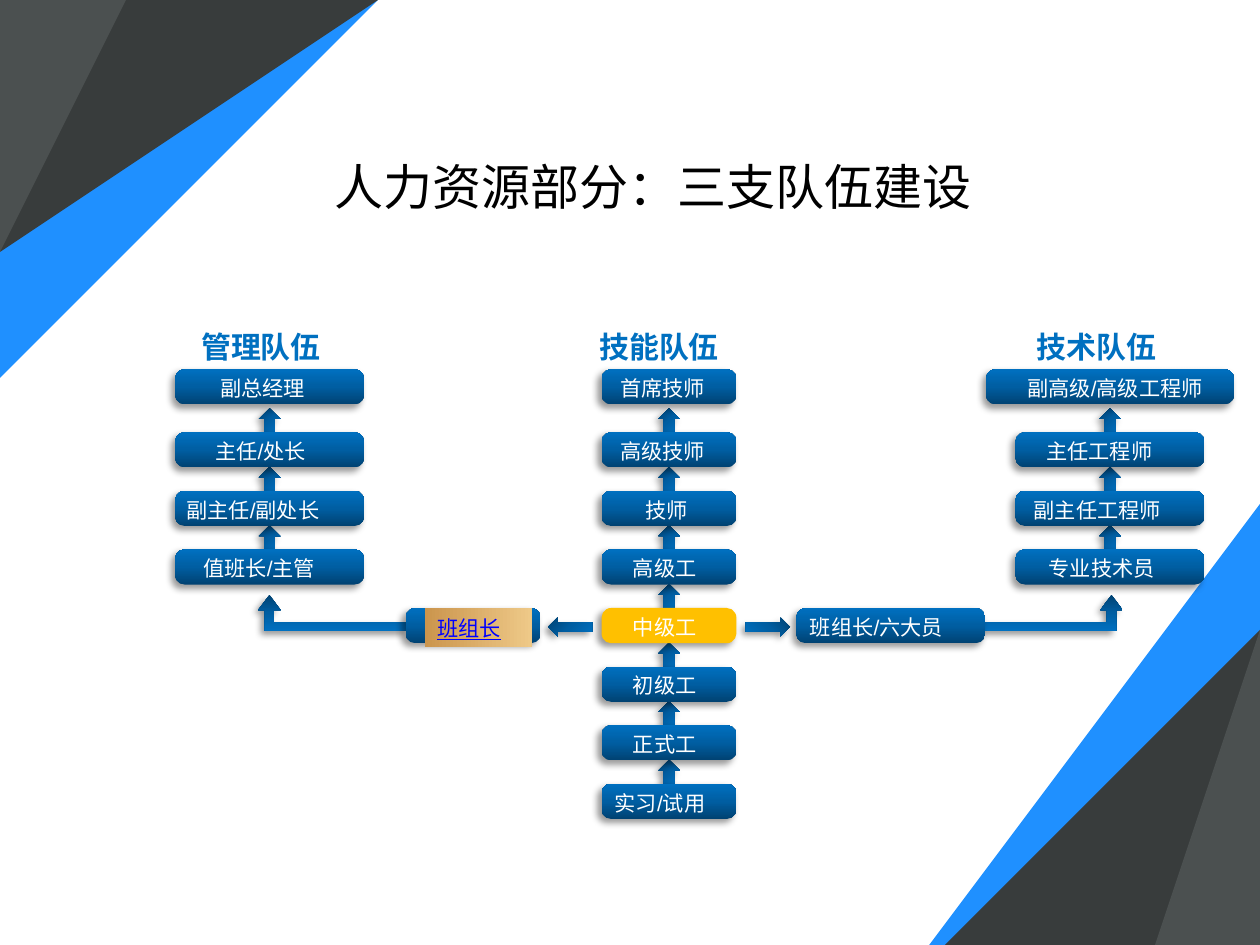
from copy import deepcopy

from lxml import etree
from pptx import Presentation
from pptx.dml.color import RGBColor
from pptx.enum.shapes import MSO_SHAPE
from pptx.enum.text import PP_ALIGN
from pptx.oxml.ns import qn
from pptx.util import Inches, Pt

ROUNDED, RECTANGLE = MSO_SHAPE.ROUNDED_RECTANGLE, MSO_SHAPE.RECTANGLE
ARROW, ELBOW = MSO_SHAPE.RIGHT_ARROW, MSO_SHAPE.BENT_UP_ARROW
LEFT, CENTER = PP_ALIGN.LEFT, PP_ALIGN.CENTER

BLACK = RGBColor(0x00, 0x00, 0x00)
WHITE = RGBColor(0xFF, 0xFF, 0xFF)
BLUE = RGBColor(0x00, 0x70, 0xC0)
GOLD = RGBColor(0xFF, 0xC0, 0x00)
LINK = RGBColor(0x00, 0x00, 0xFF)
BAND = RGBColor(0x00, 0x81, 0xFF)
CHARCOAL = RGBColor(0x38, 0x3C, 0x3C)
SLATE = RGBColor(0x4B, 0x50, 0x50)
BLUE_SHADES = [RGBColor(0x00, 0x42, 0x72), RGBColor(0x00, 0x5E, 0xA2), BLUE]
SAND_SHADES = [RGBColor(0xCB, 0x95, 0x4D), RGBColor(0xEE, 0xC9, 0x88)]

# Grid in inches: one heading row, then evenly spaced rungs
WIDTH, HEIGHT = 10, 7.5
FIRST_ROW, SECOND_ROW, PITCH = 2.93, 3.43, 0.465
PILL_HEIGHT, LABEL_HEIGHT, LABEL_SHIFT = 0.28, 0.31, 0.04
BRANCH_ROW = 4
NARROW, WIDE = 1.07, 1.5

# Ladders: heading, heading left, centre line, pill width, (rung, label width)
LADDERS = [
    ("管理队伍", 1.5, 2.14, WIDE,
     [("副总经理", 1.06), ("主任/处长", 1.14), ("副主任/副处长", 1.6), ("值班长/主管", 1.33)]),
    ("技能队伍", 4.66, 5.31, NARROW,
     [("首席技师", 1.05), ("高级技师", 1.05), ("技师", 0.65), ("高级工", 0.85),
      ("中级工", 0.85), ("初级工", 0.85), ("正式工", 0.85), ("实习/试用", 1.14)]),
    ("技术队伍", 8.13, 8.81, WIDE,
     [("副高级/高级工程师", 1.96), ("主任工程师", 1.29), ("副主任工程师", 1.49), ("专业技术员", 1.25)]),
]

CORNERS = [
    (BAND, 88, [(6.66, 7.5), (10, 4.37), (10, 5.16), (7.5, 7.5)]),
    (CHARCOAL, 100, [(7.24, 7.5), (10, 4.92), (10, 7.5)]),
    (SLATE, 100, [(9.2, 7.5), (10, 4.97), (10, 7.5)]),
    (BAND, 88, [(3.11, 0), (0, 2.91), (0, 2.18), (2.32, 0)]),
    (CHARCOAL, 100, [(2.57, 0), (0, 2.4), (0, 0)]),
    (SLATE, 100, [(0.74, 0), (0, 2.35), (0, 0)]),
]


def row_top(row):
    return FIRST_ROW if row == 0 else SECOND_ROW + (row - 1) * PITCH


def set_gradient(shape, colors, angle):
    shape.fill.gradient()
    shape.fill.gradient_angle = angle
    stop_list = shape._element.spPr.find(".//" + qn("a:gsLst"))
    for _ in colors[2:]:
        stop_list.insert(1, deepcopy(stop_list[0]))
    for index, stop in enumerate(shape.fill.gradient_stops):
        stop.position = index / (len(colors) - 1)
        stop.color.rgb = colors[index]


def add_shadow(shape):
    effects = shape._element.spPr.find(qn("a:effectLst"))
    shadow = etree.SubElement(effects, qn("a:outerShdw"), blurRad=str(Pt(4)),
                              dist=str(Pt(3)), dir="8100000", rotWithShape="0")
    color = etree.SubElement(shadow, qn("a:srgbClr"), val="000000")
    etree.SubElement(color, qn("a:alpha"), val="40000")


def add_block(slide, kind, box, colors=BLUE_SHADES, angle=90, shadow=True):
    """A borderless preset shape with a gradient or, for one colour, a solid fill."""
    shape = slide.shapes.add_shape(kind, *map(Inches, box))
    shape.shadow.inherit = False
    shape.line.fill.background()
    if len(colors) == 1:
        shape.fill.solid()
        shape.fill.fore_color.rgb = colors[0]
    else:
        set_gradient(shape, colors, angle)
    if shadow:
        add_shadow(shape)
    return shape


def write(shape, text, alignment=LEFT, **font_format):
    shape.text_frame.word_wrap = True
    paragraph = shape.text_frame.paragraphs[0]
    paragraph.alignment = alignment
    run = paragraph.add_run()
    run.text = text
    font_format = {"size": Pt(12.1), "name": "Arial", **font_format}
    run.font.color.rgb = font_format.pop("color", WHITE)
    for name, value in font_format.items():
        setattr(run.font, name, value)


def add_text(slide, box, text, **text_format):
    write(slide.shapes.add_textbox(*map(Inches, box)), text, **text_format)


def flip(shape):
    shape._element.spPr.find(qn("a:xfrm")).set("flipH", "1")


def label_box(center, row, width):
    return center + LABEL_SHIFT - width / 2, row_top(row), width, LABEL_HEIGHT


def add_pill(slide, center, row, width, colors=BLUE_SHADES):
    box = center - width / 2, row_top(row), width, PILL_HEIGHT
    add_block(slide, ROUNDED, box, colors).adjustments[0] = 0.275


def add_corners(slide):
    for color, opacity, points in CORNERS:
        builder = slide.shapes.build_freeform(*points[0], scale=Inches(1))
        builder.add_line_segments(points[1:], close=True)
        shape = builder.convert_to_shape()
        shape.shadow.inherit = False
        shape.line.fill.background()
        shape.fill.solid()
        shape.fill.fore_color.rgb = color
        if opacity < 100:
            fill_color = shape._element.spPr.find(".//" + qn("a:srgbClr"))
            etree.SubElement(fill_color, qn("a:alpha"), val=str(opacity * 1000))


def add_ladder(slide, heading, heading_left, center, pill_width, rungs):
    # Upward arrows between rungs
    for row in range(1, len(rungs)):
        box = center - 0.095, row_top(row) - 0.18, 0.19, 0.17
        add_block(slide, ARROW, box, angle=225).rotation = 270
    # Rungs
    for row, (text, label_width) in enumerate(rungs):
        oversized = label_width > 1.9
        colors = [GOLD] if text == "中级工" else BLUE_SHADES
        add_pill(slide, center, row, 1.97 if oversized else pill_width, colors)
        add_text(slide, label_box(center, row, label_width), text,
                 alignment=CENTER if oversized else LEFT)
    add_text(slide, (heading_left, 2.56, 1.39, 0.4), heading,
             size=Pt(17.1), color=BLUE, bold=True)


def add_branches(slide):
    """Sideways paths from the middle ladder to the two outer ones."""
    for elbow_left, arrow_left, flipped in [(2.05, 4.35, True), (7.73, 5.92, False)]:
        elbow = add_block(slide, ELBOW, (elbow_left, 4.72, 1.18, 0.29), angle=270)
        for index, value in enumerate((0.25, 0.304, 0.418)):
            elbow.adjustments[index] = value
        arrow = add_block(slide, ARROW, (arrow_left, 4.9, 0.35, 0.15), angle=225)
        if flipped:
            flip(elbow)
            flip(arrow)
    add_pill(slide, 3.755, BRANCH_ROW, NARROW)
    tile = add_block(slide, RECTANGLE, label_box(3.755, BRANCH_ROW, 0.85),
                     SAND_SHADES, 0, shadow=False)
    write(tile, "班组长", color=LINK, underline=True)
    add_pill(slide, 7.07, BRANCH_ROW, WIDE)
    add_text(slide, label_box(7.07, BRANCH_ROW, 1.56), "班组长/六大员")


def main():
    presentation = Presentation()
    presentation.slide_width = Inches(WIDTH)
    presentation.slide_height = Inches(HEIGHT)
    slide = presentation.slides.add_slide(presentation.slide_layouts[6])
    add_corners(slide)
    add_text(slide, (2.56, 1.19, 5.48, 0.57), "人力资源部分：三支队伍建设",
             size=Pt(28), color=BLACK)
    add_branches(slide)
    for ladder in LADDERS:
        add_ladder(slide, *ladder)
    presentation.save("out.pptx")


if __name__ == "__main__":
    main()
